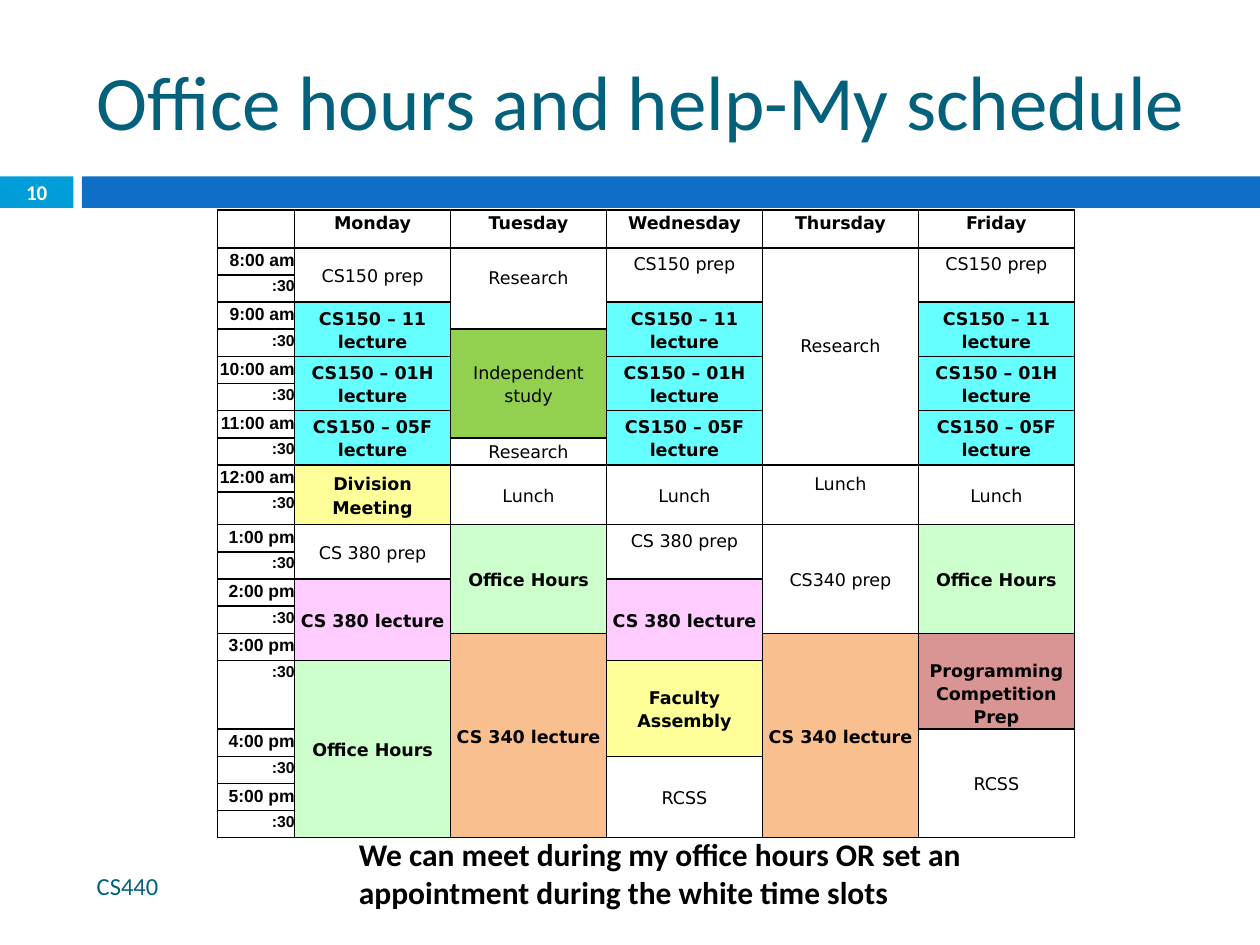
import pptx
import pptx.util
import pptx.dml.color
import pptx.enum.shapes
import pptx.enum.text
import pptx.oxml
import pptx.oxml.ns

Pt = pptx.util.Pt
RGBColor = pptx.dml.color.RGBColor
ALIGN = pptx.enum.text.PP_ALIGN
ANCHOR = pptx.enum.text.MSO_ANCHOR

WHITE = RGBColor(0xFF, 0xFF, 0xFF)
BLACK = RGBColor(0x00, 0x00, 0x00)
TEAL = RGBColor(0x04, 0x61, 0x7B)
SKY = RGBColor(0x00, 0x9D, 0xD9)
BLUE = RGBColor(0x0F, 0x6F, 0xC6)
CYAN = RGBColor(0x66, 0xFF, 0xFF)
MOSS = RGBColor(0x92, 0xD0, 0x50)
YELLOW = RGBColor(0xFF, 0xFF, 0x99)
MINT = RGBColor(0xCC, 0xFF, 0xCC)
PINK = RGBColor(0xFF, 0xCC, 0xFF)
ORANGE = RGBColor(0xFA, 0xBF, 0x8F)
ROSE = RGBColor(0xD9, 0x95, 0x94)

LINE = 13.4
RAISED = (0, LINE)
LOWERED = (LINE, 0)
CENTRED = (0, 0)

HOURS = ["8:00 am", "9:00 am", "10:00 am", "11:00 am", "12:00 am",
         "1:00 pm", "2:00 pm", "3:00 pm", "4:00 pm", "5:00 pm"]
LECTURES = [
    (3, 2, "CS150 – 11 lecture", CYAN, CENTRED),
    (5, 2, "CS150 – 01H lecture", CYAN, CENTRED),
    (7, 2, "CS150 – 05F lecture", CYAN, CENTRED),
]
LUNCH = (9, 2, "Lunch", WHITE, CENTRED)
AFTERNOON_OFFICE = (11, 4, "Office Hours", MINT, CENTRED)
LATE_LECTURE = (15, 6, "CS 340 lecture", ORANGE, CENTRED)
WEEK = {
    "Monday": [
        (1, 2, "CS150 prep", WHITE, CENTRED), *LECTURES,
        (9, 2, "Division Meeting", YELLOW, CENTRED),
        (11, 2, "CS 380 prep", WHITE, CENTRED),
        (13, 3, "CS 380 lecture", PINK, CENTRED),
        (16, 5, "Office Hours", MINT, CENTRED),
    ],
    "Tuesday": [
        (1, 3, "Research", WHITE, RAISED),
        (4, 4, "Independent study", MOSS, CENTRED),
        (8, 1, "Research", WHITE, CENTRED),
        LUNCH, AFTERNOON_OFFICE, LATE_LECTURE,
    ],
    "Wednesday": [
        (1, 2, "CS150 prep", WHITE, RAISED), *LECTURES, LUNCH,
        (11, 2, "CS 380 prep", WHITE, RAISED),
        (13, 3, "CS 380 lecture", PINK, CENTRED),
        (16, 2, "Faculty Assembly", YELLOW, CENTRED),
        (18, 3, "RCSS", WHITE, CENTRED),
    ],
    "Thursday": [
        (1, 8, "Research", WHITE, RAISED),
        (9, 2, "Lunch", WHITE, RAISED),
        (11, 4, "CS340 prep", WHITE, CENTRED),
        LATE_LECTURE,
    ],
    "Friday": [
        (1, 2, "CS150 prep", WHITE, RAISED), *LECTURES, LUNCH, AFTERNOON_OFFICE,
        (15, 2, "Programming Competition\nPrep", ROSE, LOWERED),
        (17, 4, "RCSS", WHITE, CENTRED),
    ],
}


def style(para, size, face, color, bold=False, align=ALIGN.LEFT):
    para.alignment = align
    para.font.size = Pt(size)
    para.font.name = face
    para.font.bold = bold
    para.font.color.rgb = color


def place(shape, box):
    shape.left, shape.top, shape.width, shape.height = (Pt(length) for length in box)


def add_title(page, box, text):
    title = page.shapes.title
    place(title, box)
    frame = title.text_frame
    frame.text = text
    frame.auto_size = pptx.enum.text.MSO_AUTO_SIZE.NONE
    frame.vertical_anchor = ANCHOR.MIDDLE
    style(frame.paragraphs[0], 44, "Calibri", TEAL)


def add_label(page, box, text, size, color, bold=False, align=ALIGN.LEFT, anchor=ANCHOR.MIDDLE):
    frame = page.shapes.add_textbox(*(Pt(length) for length in box)).text_frame
    frame.word_wrap = True
    frame.vertical_anchor = anchor
    frame.text = text
    style(frame.paragraphs[0], size, "Calibri", color, bold, align)


def add_bar(page, box, color):
    bar = page.shapes.add_shape(pptx.enum.shapes.MSO_SHAPE.RECTANGLE,
                                *(Pt(length) for length in box))
    bar.shadow.inherit = False
    bar.fill.solid()
    bar.fill.fore_color.rgb = color
    bar.line.fill.background()


def add_band(page, box, number):
    left, top, width, height = box
    tab, gap = 42, 4.8
    add_bar(page, (left, top, tab, height), SKY)
    add_bar(page, (left + tab + gap, top, width - tab - gap, height), BLUE)
    add_label(page, (left, top, tab, height), number, 12, WHITE, True, ALIGN.CENTER)


def prepare_cell(cell):
    properties = cell._tc.get_or_add_tcPr()
    for side in ("lnL", "lnR", "lnT", "lnB"):
        properties.append(pptx.oxml.parse_xml(
            f'<a:{side} {pptx.oxml.ns.nsdecls("a")} w="12700"><a:solidFill>'
            f'<a:srgbClr val="{BLACK}"/></a:solidFill></a:{side}>'))
    cell.margin_left = cell.margin_right = cell.margin_top = cell.margin_bottom = 0
    cell.fill.solid()
    cell.fill.fore_color.rgb = WHITE
    cell.text_frame.paragraphs[0].line_spacing = Pt(10)


def fill_cell(cell, text, size=10, face="DejaVu Sans", bold=True, align=ALIGN.CENTER):
    cell.text_frame.text = text
    for para in cell.text_frame.paragraphs:
        para.line_spacing = 1.15
        style(para, size, face, BLACK, bold, align)


def add_schedule(page, box):
    left, top, width, height = box
    row_count, column_count = 1 + 2 * len(HOURS), 1 + len(WEEK)
    table = page.shapes.add_table(row_count, column_count,
                                  *(Pt(length) for length in box)).table
    table.first_row = table.horz_banding = False

    time_width = 43.9
    for column in table.columns:
        column.width = Pt((width - time_width) / len(WEEK))
    table.columns[0].width = Pt(time_width)

    special_rows = {0: 18.7, 10: 18.7, 16: 39.2}
    half_hour = (height - sum(special_rows.values())) / (row_count - len(special_rows))
    for index, row in enumerate(table.rows):
        row.height = Pt(special_rows.get(index, half_hour))

    for cell in table.iter_cells():
        prepare_cell(cell)

    for index, hour in enumerate(HOURS):
        row = 1 + 2 * index
        fill_cell(table.cell(row, 0), hour, 10, "Arial", align=ALIGN.RIGHT)
        fill_cell(table.cell(row + 1, 0), ":30", 9, "Arial", align=ALIGN.RIGHT)

    for column, (day, events) in enumerate(WEEK.items(), start=1):
        fill_cell(table.cell(0, column), day)
        for row, span, text, color, (above, below) in events:
            cell = table.cell(row, column)
            if span > 1:
                cell.merge(table.cell(row + span - 1, column))
            cell.vertical_anchor = ANCHOR.MIDDLE
            cell.margin_top, cell.margin_bottom = Pt(above), Pt(below)
            cell.fill.fore_color.rgb = color
            fill_cell(cell, text, bold=color not in (WHITE, MOSS))


def main():
    deck = pptx.Presentation()
    deck.slide_width, deck.slide_height = Pt(720), Pt(540)
    page = deck.slides.add_slide(deck.slide_layouts[5])
    add_band(page, (0, 100.8, 720, 18), "10")
    add_title(page, (48.2, 18, 642.2, 77.8), "Office hours and help-My schedule")
    add_label(page, (48.2, 491.8, 427, 28.8), "CS440", 14, TEAL)
    add_label(page, (198, 473.8, 360, 51),
              "We can meet during my office hours OR set an appointment "
              "during the white time slots", 18, BLACK, True, anchor=ANCHOR.TOP)
    add_schedule(page, (124.4, 120, 489.6, 355.7))
    deck.save("out.pptx")


if __name__ == "__main__":
    main()
